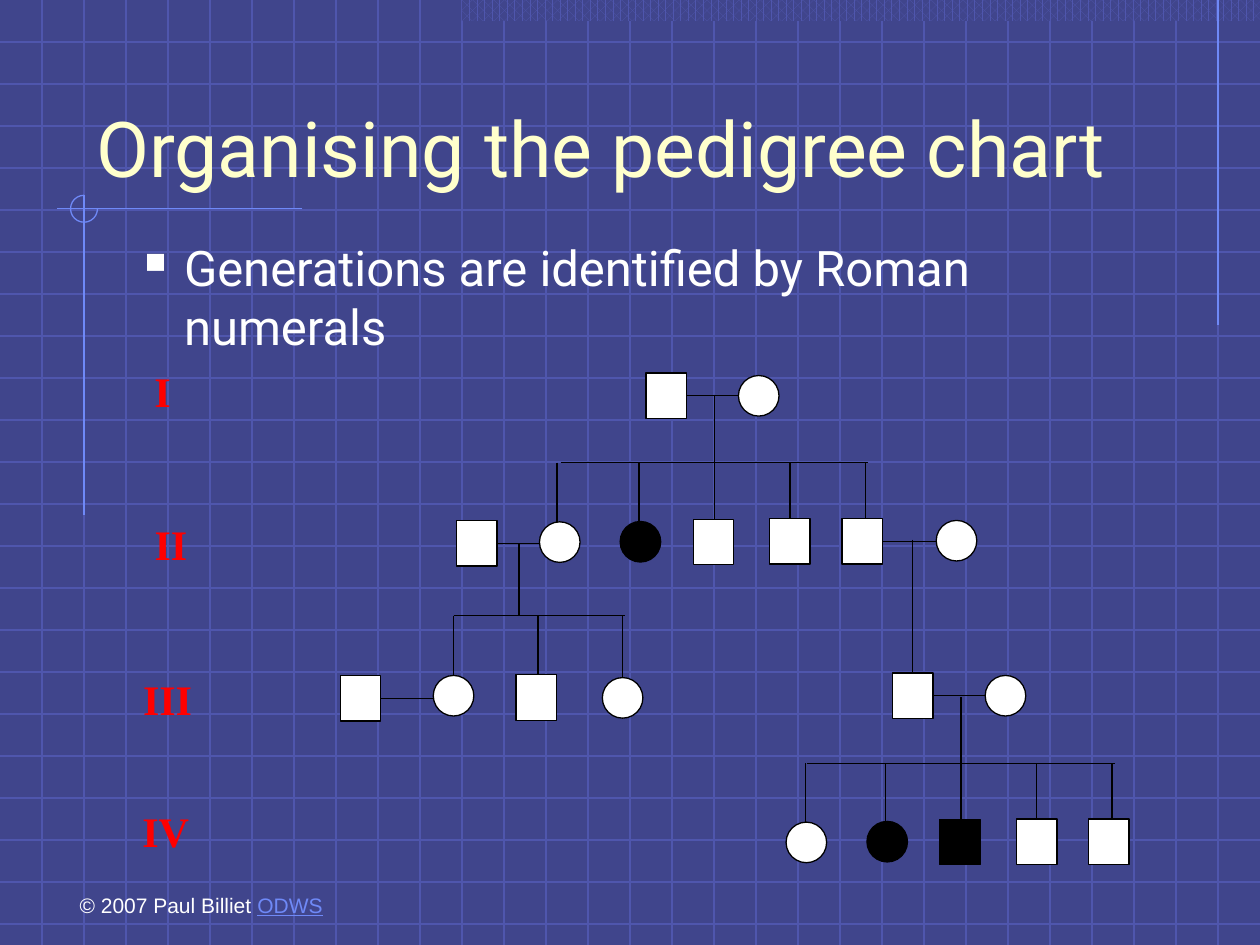
"""Build a slide showing how generations are numbered on a pedigree chart."""
from dataclasses import dataclass

import pptx
import pptx.dml.color
import pptx.enum.dml
import pptx.enum.shapes
import pptx.enum.text
import pptx.oxml.ns
import pptx.util
from lxml import etree

Pt = pptx.util.Pt
ShapeType = pptx.enum.shapes.MSO_SHAPE
Align = pptx.enum.text.PP_ALIGN
Anchor = pptx.enum.text.MSO_ANCHOR

COLOURS = {
    "background": "40458C",
    "grid": "4F56AD",
    "accent": "6F89F7",
    "title": "FFFFCC",
    "white": "FFFFFF",
    "black": "000000",
    "numeral": "FF0000",
}
WIDTH, HEIGHT, GRID_STEP = 720, 540, 24
SYMBOL_WIDTH, SQUARE_HEIGHT = 23.2, 26


@dataclass
class Person:
    left: float
    top: float
    male: bool
    affected: bool = False


@dataclass
class Descent:
    parent_x: float
    parent_y: float
    bar_left: float
    bar_right: float
    bar_y: float
    child_xs: list[float]
    child_y: float


@dataclass
class Label:
    text: str
    left: float
    top: float
    width: float
    height: float
    size: float
    font: str
    colour: str
    bold: bool = False
    align: Align = Align.LEFT
    anchor: Anchor = Anchor.TOP


PEOPLE = {
    "I-1": Person(369.2, 213.2, True),
    "I-2": Person(422, 214.6, False),
    "II-1": Person(260.8, 297.4, True),
    "II-2": Person(308.3, 298.2, False),
    "II-3": Person(354.4, 298, False, True),
    "II-4": Person(396.2, 296.8, True),
    "II-5": Person(439.8, 296.4, True),
    "II-6": Person(481.2, 296.4, True),
    "II-7": Person(535, 297.4, False),
    "III-1": Person(194.4, 386, True),
    "III-2": Person(247.6, 386, False),
    "III-3": Person(294.9, 385.6, True),
    "III-4": Person(344.2, 387.2, False),
    "III-5": Person(510, 384.6, True),
    "III-6": Person(563, 386, False),
    "IV-1": Person(449.2, 469.8, False),
    "IV-2": Person(495.4, 469.4, False, True),
    "IV-3": Person(537, 468.2, True, True),
    "IV-4": Person(580.8, 468, True),
    "IV-5": Person(622, 468, True),
}
COUPLES = [("I-1", "I-2"), ("II-1", "II-2"), ("II-6", "II-7"),
           ("III-1", "III-2"), ("III-5", "III-6")]
DESCENTS = [
    Descent(408.3, 225.5, 320.4, 496, 264.4, [318.3, 365.2, 408.3, 451.5, 494.6], 303),
    Descent(296.6, 311, 259.2, 357.2, 351.8, [259.2, 307.4, 355.7], 393),
    Descent(549.2, 398.5, 461.3, 637.2, 436.2, [460.4, 506.2, 549.2, 592.4, 635.4], 475),
]
ONLY_CHILD_LINE = (521.5, 308.3, 521.5, 391)
ACCENT_LINES = [(696, 0, 696, 186), (172.8, 119.3, 32.5, 119.3), (48, 111.6, 48, 294.5)]

TITLE = Label("Organising the pedigree chart", 48, 24, 612, 90, 44, "Roboto", "title",
              anchor=Anchor.BOTTOM)
BODY = Label("Generations are identified by Roman numerals", 39.6, 132, 631, 72, 28,
             "Roboto", "white")
CREDIT = Label("© 2007 Paul Billiet ", 38.4, 506.2, 171.4, 21.6, 12, "Arial", "white")
NUMERALS = [("I", 75.6, 205.2, 34.6), ("II", 75, 293, 45.4),
            ("III", 72, 381.6, 47.5), ("IV", 71.3, 456.5, 46.8)]


def colour(name: str) -> pptx.dml.color.RGBColor:
    """Return the named colour."""
    return pptx.dml.color.RGBColor.from_string(COLOURS[name])


def draw_line(slide, x1: float, y1: float, x2: float, y2: float, name: str = "black"):
    """Draw a thin straight connector."""
    connector = slide.shapes.add_connector(
        pptx.enum.shapes.MSO_CONNECTOR.STRAIGHT, Pt(x1), Pt(y1), Pt(x2), Pt(y2))
    connector.line.color.rgb = colour(name)
    connector.line.width = Pt(0.75)
    etree.SubElement(connector._element.spPr, pptx.oxml.ns.qn("a:effectLst"))
    return connector


def draw_shape(slide, kind: ShapeType, left: float, top: float, width: float, height: float):
    """Draw a preset shape without a shadow."""
    shape = slide.shapes.add_shape(kind, Pt(left), Pt(top), Pt(width), Pt(height))
    shape.shadow.inherit = False
    return shape


def draw_backdrop(slide) -> None:
    """Draw the grid, the patterned band and the accent marks."""
    for y in range(GRID_STEP, HEIGHT, GRID_STEP):
        draw_line(slide, 0, y, WIDTH, y, "grid")
    for x in range(GRID_STEP, WIDTH, GRID_STEP):
        draw_line(slide, x, 0, x, HEIGHT, "grid")
    band = draw_shape(slide, ShapeType.RECTANGLE, 264, 0, 456, 12)
    band.fill.patterned()
    band.fill.pattern = pptx.enum.dml.MSO_PATTERN.PERCENT_60
    band.fill.fore_color.rgb = colour("grid")
    band.fill.back_color.rgb = colour("background")
    band.line.fill.background()
    for ends in ACCENT_LINES:
        draw_line(slide, *ends, "accent")
    arc = draw_shape(slide, ShapeType.ARC, 40.3, 111.6, 15.4, 15.4)
    arc.adjustments[0], arc.adjustments[1] = 0, 162
    arc.fill.background()
    arc.line.color.rgb = colour("accent")
    arc.line.width = Pt(0.75)


def draw_label(slide, label: Label):
    """Draw a text box and return its paragraph."""
    box = slide.shapes.add_textbox(
        Pt(label.left), Pt(label.top), Pt(label.width), Pt(label.height))
    box.text_frame.word_wrap = True
    box.text_frame.vertical_anchor = label.anchor
    paragraph = box.text_frame.paragraphs[0]
    paragraph.alignment = label.align
    paragraph.add_run().text = label.text
    paragraph.font.name = label.font
    paragraph.font.size = Pt(label.size)
    paragraph.font.bold = label.bold
    paragraph.font.color.rgb = colour(label.colour)
    return paragraph


def add_bullet(paragraph) -> None:
    """Give a paragraph a small square bullet and a hanging indent."""
    properties = paragraph._p.get_or_add_pPr()
    properties.set("marL", str(Pt(58.5)))
    properties.set("indent", str(Pt(-22.5)))
    size = etree.Element(pptx.oxml.ns.qn("a:buSzPct"), val="60000")
    mark = etree.Element(pptx.oxml.ns.qn("a:buChar"), char="■")
    properties.insert(0, size)
    properties.insert(1, mark)


def draw_descent(slide, descent: Descent) -> None:
    """Draw the line from a couple, the sibling bar and the drop to each child."""
    draw_line(slide, descent.parent_x, descent.parent_y, descent.parent_x, descent.bar_y)
    draw_line(slide, descent.bar_left, descent.bar_y, descent.bar_right, descent.bar_y)
    for x in descent.child_xs:
        draw_line(slide, x, descent.bar_y, x, descent.child_y)


def draw_person(slide, person: Person):
    """Draw a square for a male or a circle for a female."""
    kind = ShapeType.RECTANGLE if person.male else ShapeType.OVAL
    height = SQUARE_HEIGHT if person.male else SYMBOL_WIDTH
    symbol = draw_shape(slide, kind, person.left, person.top, SYMBOL_WIDTH, height)
    symbol.fill.solid()
    symbol.fill.fore_color.rgb = colour("black" if person.affected else "white")
    symbol.line.color.rgb = colour("black")
    symbol.line.width = Pt(0.75)
    return symbol


def main() -> None:
    """Build and save the slide."""
    presentation = pptx.Presentation()
    presentation.slide_width, presentation.slide_height = Pt(WIDTH), Pt(HEIGHT)
    slide = presentation.slides.add_slide(presentation.slide_layouts[6])
    slide.background.fill.solid()
    slide.background.fill.fore_color.rgb = colour("background")
    draw_backdrop(slide)
    draw_label(slide, TITLE)
    add_bullet(draw_label(slide, BODY))
    for descent in DESCENTS:
        draw_descent(slide, descent)
    draw_line(slide, *ONLY_CHILD_LINE)
    symbols = {name: draw_person(slide, person) for name, person in PEOPLE.items()}
    for husband, wife in COUPLES:
        man, y = PEOPLE[husband], PEOPLE[husband].top + SQUARE_HEIGHT / 2
        mating = draw_line(slide, man.left + SYMBOL_WIDTH, y, PEOPLE[wife].left, y)
        mating.begin_connect(symbols[husband], 3)
    for text, left, top, width in NUMERALS:
        draw_label(slide, Label(text, left, top, width, 31.7, 24, "Times New Roman",
                                "numeral", True, Align.CENTER))
    site = draw_label(slide, CREDIT).add_run()
    site.text = "ODWS"
    site.font.underline = True
    site.font.color.rgb = colour("accent")
    presentation.save("out.pptx")


if __name__ == "__main__":
    main()
